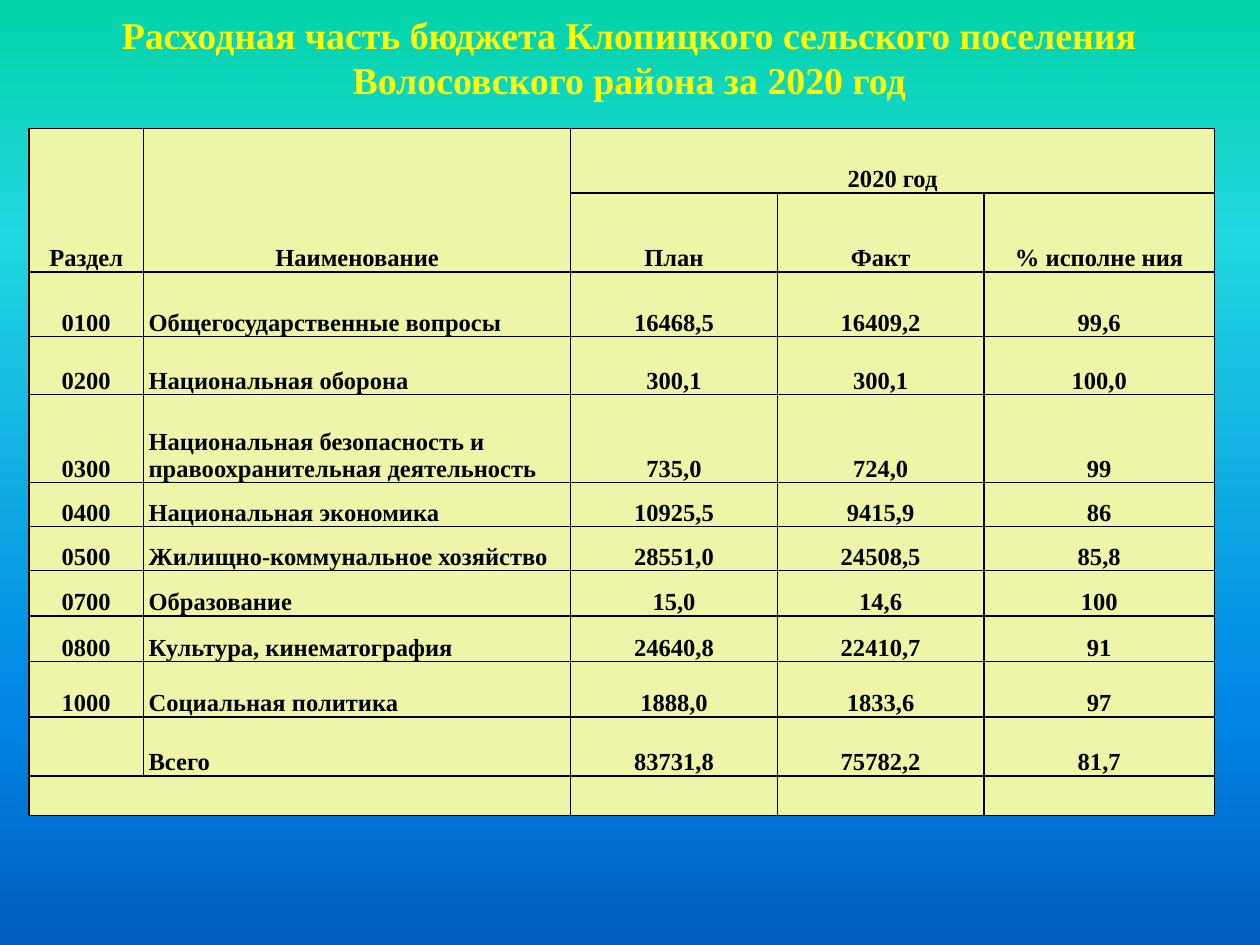
import copy

import lxml.etree
import pptx
import pptx.dml.color
import pptx.enum.text
import pptx.oxml.ns
import pptx.util

Inches = pptx.util.Inches
ALIGN = pptx.enum.text.PP_ALIGN
ANCHOR = pptx.enum.text.MSO_ANCHOR
FONT = "Times New Roman"
TITLE = "Расходная часть бюджета Клопицкого сельского поселения Волосовского района за 2020 год"
GRADIENT = [(0, "03D4A8"), (0.25, "21D6E0"), (0.75, "0087E6"), (1, "005CBF")]
COLUMN_WIDTHS = [0.91, 3.39, 1.64, 1.64, 1.83]
ROW_HEIGHTS = [0.51, 0.63, 0.51, 0.46, 0.7, 0.35, 0.35, 0.36, 0.36, 0.44, 0.47, 0.31]
HEADER_ROWS = 2
MERGES = [((0, 0), (1, 0)), ((0, 1), (1, 1)), ((0, 2), (0, 4)), ((11, 0), (11, 1))]
BUDGET = [
    ["Раздел", "Наименование", "2020 год", "", ""],
    ["", "", "План", "Факт", "% исполне ния"],
    ["0100", "Общегосударственные вопросы", "16468,5", "16409,2", "99,6"],
    ["0200", "Национальная оборона", "300,1", "300,1", "100,0"],
    ["0300", "Национальная безопасность и правоохранительная деятельность",
     "735,0", "724,0", "99"],
    ["0400", "Национальная экономика", "10925,5", "9415,9", "86"],
    ["0500", "Жилищно-коммунальное хозяйство", "28551,0", "24508,5", "85,8"],
    ["0700", "Образование", "15,0", "14,6", "100"],
    ["0800", "Культура, кинематография", "24640,8", "22410,7", "91"],
    ["1000", "Социальная политика", "1888,0", "1833,6", "97"],
    ["", "Всего", "83731,8", "75782,2", "81,7"],
    ["", "", "", "", ""],
]


def color(value):
    """Turn a hex string into a colour."""
    return pptx.dml.color.RGBColor.from_string(value)


def add_span(para, text, size, value):
    """Add one bold run to a paragraph."""
    span = para.add_run()
    span.text = text
    span.font.name = FONT
    span.font.size = pptx.util.Pt(size)
    span.font.bold = True
    span.font.color.rgb = color(value)


def paint_background(page):
    """Fill the page with a gradient running from top to bottom."""
    fill = page.background.fill
    fill.gradient()
    fill.gradient_angle = 270
    stop_list = page.background._cSld.find(".//" + pptx.oxml.ns.qn("a:gsLst"))
    while len(stop_list) < len(GRADIENT):
        stop_list.append(copy.deepcopy(stop_list[0]))
    for stop, (position, value) in zip(fill.gradient_stops, GRADIENT):
        stop.position = position
        stop.color.rgb = color(value)


def place_title(page, left, top, width, height):
    """Move and format the title placeholder."""
    box = page.shapes.title
    box.left, box.top, box.width, box.height = left, top, width, height
    frame = box.text_frame
    frame.word_wrap = True
    frame.auto_size = pptx.enum.text.MSO_AUTO_SIZE.NONE
    frame.vertical_anchor = ANCHOR.BOTTOM
    para = frame.paragraphs[0]
    para.alignment = ALIGN.CENTER
    add_span(para, TITLE, 21.6, "FFFF00")


def add_borders(cell, value, width):
    """Draw a solid line on all four sides of a cell."""
    properties = cell._tc.get_or_add_tcPr()
    for side in ("lnL", "lnR", "lnT", "lnB"):
        line = lxml.etree.SubElement(properties, pptx.oxml.ns.qn("a:" + side))
        line.set("w", str(pptx.util.Pt(width)))
        fill = lxml.etree.SubElement(line, pptx.oxml.ns.qn("a:solidFill"))
        lxml.etree.SubElement(fill, pptx.oxml.ns.qn("a:srgbClr")).set("val", value)


def format_cell(cell, text, is_name):
    """Style one cell and write its text."""
    add_borders(cell, "000000", 1)
    cell.fill.solid()
    cell.fill.fore_color.rgb = color("EEF5A9")
    cell.vertical_anchor = ANCHOR.BOTTOM
    cell.margin_left = Inches(0.04 if is_name else 0.01)
    cell.margin_right = cell.margin_top = Inches(0.01)
    cell.margin_bottom = 0
    para = cell.text_frame.paragraphs[0]
    para.alignment = ALIGN.LEFT if is_name else ALIGN.CENTER
    if text:
        add_span(para, text, 14, "000000")


def place_budget_table(page, left, top, width, height):
    """Add the table of planned and actual spending."""
    table = page.shapes.add_table(
        len(ROW_HEIGHTS), len(COLUMN_WIDTHS), left, top, width, height).table
    for column, size in zip(table.columns, COLUMN_WIDTHS):
        column.width = Inches(size)
    for row, size in zip(table.rows, ROW_HEIGHTS):
        row.height = Inches(size)
    for first, last in MERGES:
        table.cell(*first).merge(table.cell(*last))
    for row_index, texts in enumerate(BUDGET):
        for column_index, text in enumerate(texts):
            is_name = column_index == 1 and row_index >= HEADER_ROWS
            format_cell(table.cell(row_index, column_index), text, is_name)


def main():
    """Build the deck and save it."""
    deck = pptx.Presentation()
    deck.slide_width, deck.slide_height = Inches(10), Inches(7.5)
    page = deck.slides.add_slide(deck.slide_layouts[5])
    paint_background(page)
    place_title(page, Inches(0.23), Inches(0), Inches(9.53), Inches(0.86))
    place_budget_table(page, Inches(0.23), Inches(1.02), Inches(9.41), Inches(5.46))
    deck.save("out.pptx")


if __name__ == "__main__":
    main()
